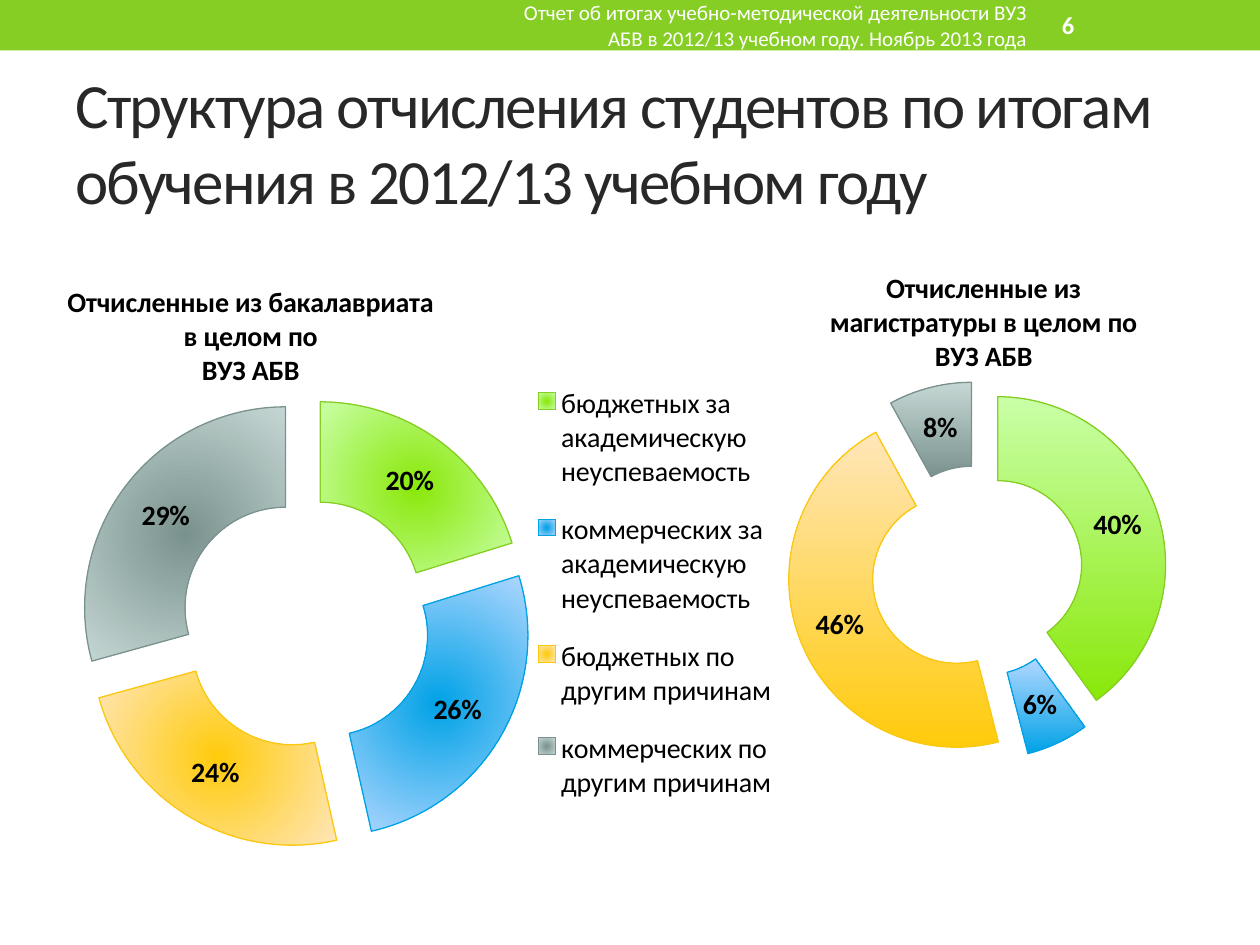
from dataclasses import dataclass
from typing import NamedTuple, Optional

import lxml.etree
import pptx
import pptx.chart.data
import pptx.dml.color
import pptx.enum.chart
import pptx.enum.shapes
import pptx.enum.text
import pptx.oxml.ns
import pptx.util

RGBColor = pptx.dml.color.RGBColor
Align = pptx.enum.text.PP_ALIGN
qn = pptx.oxml.ns.qn

FONT = "Calibri"
SCHOOL = "ВУЗ АБВ"
BAND = RGBColor(0x86, 0xCE, 0x24)
INK = RGBColor(0x28, 0x28, 0x28)
WHITE = RGBColor(0xFF, 0xFF, 0xFF)
BLACK = RGBColor(0x00, 0x00, 0x00)

SLIDE_WIDTH = pptx.util.Inches(10)
SLIDE_HEIGHT = pptx.util.Inches(7.5)


class Area(NamedTuple):
    """Left, top, width and height in percent of the surrounding frame."""
    left: float
    top: float
    width: float
    height: float

    def on_slide(self) -> tuple:
        sizes = (SLIDE_WIDTH, SLIDE_HEIGHT) * 2
        return tuple(round(share * size / 100) for share, size in zip(self, sizes))


class Slice(NamedTuple):
    label: str
    strong: RGBColor
    light: RGBColor
    outline: RGBColor


@dataclass
class Label:
    area: Area
    text: str
    size: float
    color: RGBColor
    bold: bool = False
    align: Align = Align.LEFT
    spacing: int = 0  # hundredths of a point


@dataclass
class Ring:
    area: Area
    title: list[str]
    title_at: tuple[float, float]
    plot: Area
    values: list[int]
    explosion: int
    radial: bool = False
    legend: Optional[Area] = None


SLICES = [
    Slice("бюджетных за академическую неуспеваемость",
          RGBColor(0x8A, 0xE8, 0x0A), RGBColor(0xC9, 0xFF, 0xA7), BAND),
    Slice("коммерческих за академическую неуспеваемость",
          RGBColor(0x00, 0xA2, 0xE6), RGBColor(0xB1, 0xD7, 0xFF), RGBColor(0x00, 0xA2, 0xE6)),
    Slice("бюджетных по другим причинам",
          RGBColor(0xFF, 0xCB, 0x0B), RGBColor(0xFF, 0xE6, 0xBA), RGBColor(0xFA, 0xC8, 0x10)),
    Slice("коммерческих по другим причинам",
          RGBColor(0x7A, 0x92, 0x8E), RGBColor(0xC5, 0xD7, 0xD4), RGBColor(0x7A, 0x92, 0x8E)),
]

LABELS = [
    Label(Area(5, 7.73, 90, 14.4),
          "Структура отчисления студентов по итогам обучения в 2012/13 учебном году",
          36, INK, spacing=-100),
    Label(Area(37.5, 0.27, 45, 4.8),
          f"Отчет об итогах учебно-методической деятельности {SCHOOL} в 2012/13 "
          "учебном году. Ноябрь 2013 года", 12, WHITE, align=Align.RIGHT),
    Label(Area(83.3, 0.27, 11.7, 4.8), "6", 14, WHITE, bold=True),
]

RINGS = [
    Ring(Area(5, 24.4, 59.3, 68.8),
         ["Отчисленные из бакалавриата", "в целом по", SCHOOL], (0.1, 7.6),
         Area(2.2, 25.6, 60.5, 69.5), [20, 26, 24, 29], 25,
         radial=True, legend=Area(62.2, 20.4, 34, 71)),
    Ring(Area(61.2, 26, 33.8, 67.2),
         [f"Отчисленные из магистратуры в целом по {SCHOOL}"], (12.6, 2.8),
         Area(3.8, 21.4, 89.1, 59.8), [40, 6, 46, 8], 26),
]


def style(font, size: float, color: RGBColor, bold: bool = False) -> None:
    font.name, font.size, font.bold = FONT, pptx.util.Pt(size), bold
    font.color.rgb = color


def draw_label(page, label: Label) -> None:
    frame = page.shapes.add_textbox(*label.area.on_slide()).text_frame
    frame.word_wrap = True
    frame.vertical_anchor = pptx.enum.text.MSO_ANCHOR.MIDDLE
    para = frame.paragraphs[0]
    para.alignment = label.align
    span = para.add_run()
    span.text = label.text
    style(span.font, label.size, label.color, label.bold)
    if label.spacing:
        span.font._element.set("spc", str(label.spacing))


def set_layout(element, index: int, inner: bool = False, **shares: float) -> None:
    """Fix a chart part in place; shares are percents of the chart frame."""
    for old in element.findall(qn("c:layout")):
        element.remove(old)
    layout = lxml.etree.Element(qn("c:layout"))
    manual = lxml.etree.SubElement(layout, qn("c:manualLayout"))
    settings = [("layoutTarget", "inner")] if inner else []
    settings += [("xMode", "edge"), ("yMode", "edge")]
    settings += [(name, f"{share / 100:.3f}") for name, share in shares.items()]
    for name, value in settings:
        lxml.etree.SubElement(manual, qn(f"c:{name}")).set("val", value)
    element.insert(index, layout)


def paint_slice(point, part: Slice, radial: bool) -> None:
    fill = point.format.fill
    fill.gradient()
    fill.gradient_angle = 90
    for stop, color, position in zip(fill.gradient_stops, (part.strong, part.light), (0, 1)):
        stop.color.rgb = color
        stop.position = position
    point.format.line.color.rgb = part.outline
    point.format.line.width = pptx.util.Pt(0.75)
    if radial:
        linear = next(point.format._element.iter(qn("a:lin")))
        circle = lxml.etree.Element(qn("a:path"), {"path": "circle"})
        sides = dict.fromkeys("ltrb", "50000")
        lxml.etree.SubElement(circle, qn("a:fillToRect"), sides)
        linear.getparent().replace(linear, circle)


def draw_ring(page, ring: Ring) -> None:
    data = pptx.chart.data.CategoryChartData()
    data.categories = [part.label if ring.legend else str(number)
                       for number, part in enumerate(SLICES, 1)]
    data.add_series("Series 1", ring.values)
    chart = page.shapes.add_chart(
        pptx.enum.chart.XL_CHART_TYPE.DOUGHNUT, *ring.area.on_slide(), data).chart
    style(chart.font, 10, BLACK)

    # Heading
    chart.has_title = True
    frame = chart.chart_title.text_frame
    for number, line in enumerate(ring.title):
        para = frame.add_paragraph() if number else frame.paragraphs[0]
        para.alignment = Align.CENTER
        span = para.add_run()
        span.text = line
        style(span.font, 16, BLACK, bold=True)
    left, top = ring.title_at
    set_layout(chart.chart_title._element, 1, x=left, y=top)

    # Ring and its slices
    plot = chart.plots[0]
    plot.vary_by_categories = True
    area = ring.plot
    set_layout(plot._element.getparent(), 0, inner=True,
               x=area.left, y=area.top, w=area.width, h=area.height)
    series = plot.series[0]
    explosion = lxml.etree.Element(qn("c:explosion"), {"val": str(ring.explosion)})
    series._element.find(qn("c:tx")).addnext(explosion)
    for number, part in enumerate(SLICES):
        paint_slice(series.points[number], part, ring.radial)

    # Percentages
    labels = series.data_labels
    labels.show_value, labels.show_percentage = False, True
    labels.number_format, labels.number_format_is_linked = "0%", False
    style(labels.font, 16, BLACK, bold=True)

    # Legend
    chart.has_legend = ring.legend is not None
    if ring.legend:
        chart.legend.position = pptx.enum.chart.XL_LEGEND_POSITION.RIGHT
        chart.legend.include_in_layout = False
        style(chart.legend.font, 16, BLACK)
        area = ring.legend
        set_layout(chart.legend._element, 1,
                   x=area.left, y=area.top, w=area.width, h=area.height)


def main() -> None:
    deck = pptx.Presentation()
    deck.slide_width, deck.slide_height = SLIDE_WIDTH, SLIDE_HEIGHT
    page = deck.slides.add_slide(deck.slide_layouts[6])

    # Top band
    band = page.shapes.add_shape(
        pptx.enum.shapes.MSO_SHAPE.RECTANGLE, *Area(0, 0, 100, 5.33).on_slide())
    band.shadow.inherit = False
    band.fill.solid()
    band.fill.fore_color.rgb = BAND
    band.line.fill.background()

    for label in LABELS:
        draw_label(page, label)
    for ring in RINGS:
        draw_ring(page, ring)
    deck.save("out.pptx")


if __name__ == "__main__":
    main()
